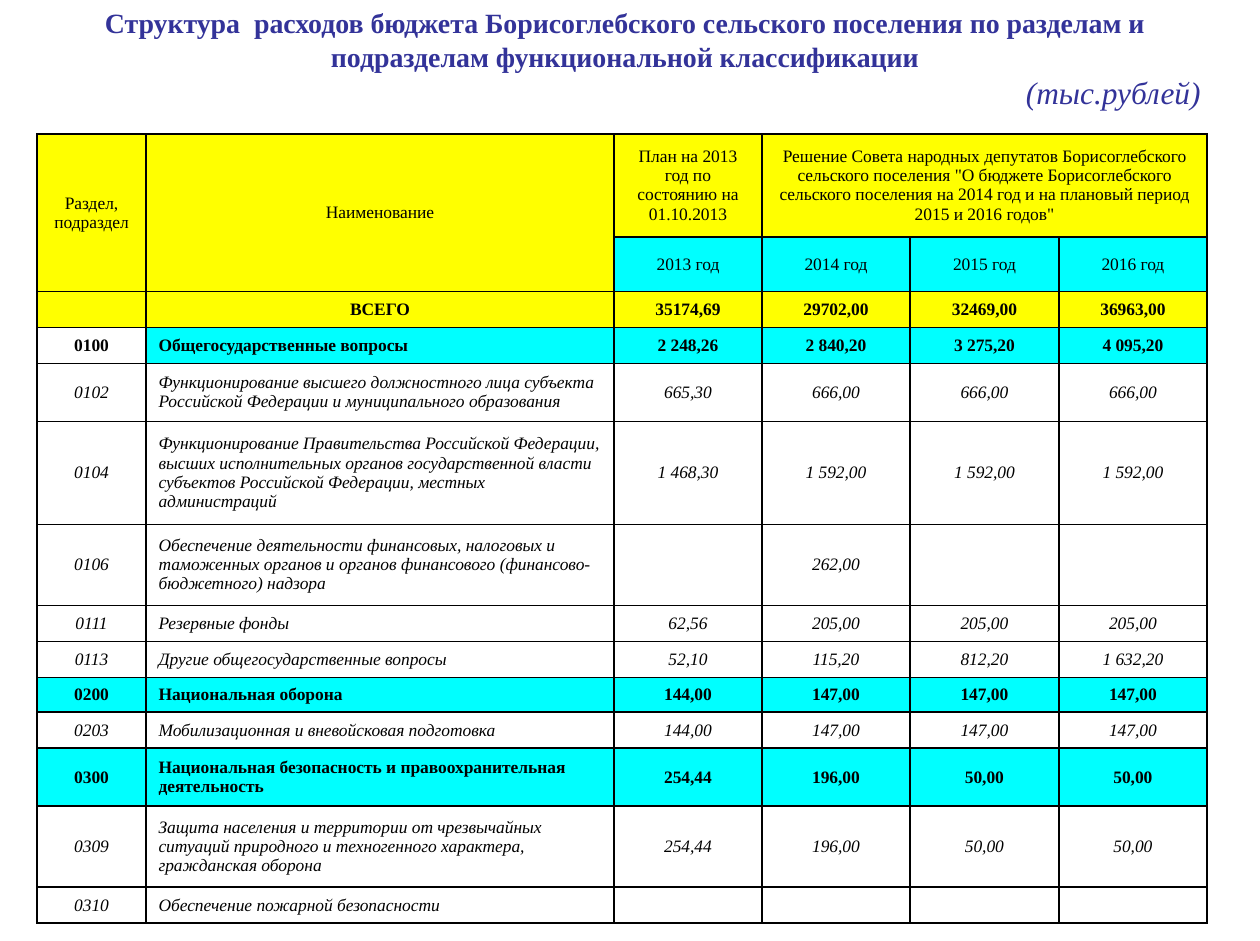
"""Build a slide with the budget expenditure table of a rural settlement."""
import lxml.etree
import pptx
import pptx.dml.color
import pptx.enum.text
import pptx.oxml.ns
import pptx.util

PX = 914400 / 125.5
YELLOW, CYAN, WHITE, BLACK, NAVY = "FFFF00", "00FFFF", "FFFFFF", "000000", "333399"
ALIGN = pptx.enum.text.PP_ALIGN
qn = pptx.oxml.ns.qn


def px(length):
    return pptx.util.Emu(round(length * PX))


def style(span, size, color, bold=False, italic=False):
    span.font.name = "Times New Roman"
    span.font.size = pptx.util.Pt(size)
    span.font.bold = bold
    span.font.italic = italic
    span.font.color.rgb = pptx.dml.color.RGBColor.from_string(color)


deck = pptx.Presentation()
deck.slide_width, deck.slide_height = px(1260), px(941)
page = deck.slides.add_slide(deck.slide_layouts[6])

box = page.shapes.add_textbox(px(37), px(0), px(1176), px(118))
box.text_frame.word_wrap = True
title = box.text_frame.paragraphs[0]
title.text = "Структура  расходов бюджета Борисоглебского сельского поселения по разделам и подразделам функциональной классификации"
title.alignment = ALIGN.CENTER
style(title.runs[0], 16, NAVY, bold=True)
units = box.text_frame.add_paragraph()
units.text = "(тыс.рублей)"
units.alignment = ALIGN.RIGHT
style(units.runs[0], 18, NAVY, italic=True)

column_widths = [109, 468, 148, 148, 149, 148]
rows = [
    (103, "head", ["Раздел, подраздел", "Наименование", "План на 2013 год по состоянию на 01.10.2013",
                   "Решение Совета народных депутатов Борисоглебского сельского поселения "
                   "\"О бюджете Борисоглебского сельского поселения на 2014 год и на плановый период 2015 и 2016 годов\"",
                   "", ""]),
    (54, "years", ["", "", "2013 год", "2014 год", "2015 год", "2016 год"]),
    (36, "total", ["", "ВСЕГО", "35174,69", "29702,00", "32469,00", "36963,00"]),
    (36, "section", ["0100", "Общегосударственные вопросы", "2 248,26", "2 840,20", "3 275,20", "4 095,20"]),
    (58, "item", ["0102", "Функционирование высшего должностного лица субъекта Российской Федерации "
                  "и муниципального образования", "665,30", "666,00", "666,00", "666,00"]),
    (103, "item", ["0104", "Функционирование Правительства Российской Федерации, высших исполнительных органов "
                   "государственной власти субъектов Российской Федерации, местных администраций",
                   "1 468,30", "1 592,00", "1 592,00", "1 592,00"]),
    (81, "item", ["0106", "Обеспечение деятельности финансовых, налоговых и таможенных органов "
                  "и органов финансового (финансово-бюджетного) надзора", "", "262,00", "", ""]),
    (36, "item", ["0111", "Резервные фонды", "62,56", "205,00", "205,00", "205,00"]),
    (36, "item", ["0113", "Другие общегосударственные вопросы", "52,10", "115,20", "812,20", "1 632,20"]),
    (35, "section", ["0200", "Национальная оборона", "144,00", "147,00", "147,00", "147,00"]),
    (36, "item", ["0203", "Мобилизационная и вневойсковая подготовка", "144,00", "147,00", "147,00", "147,00"]),
    (58, "section", ["0300", "Национальная безопасность и правоохранительная деятельность",
                     "254,44", "196,00", "50,00", "50,00"]),
    (81, "item", ["0309", "Защита населения и территории от чрезвычайных ситуаций природного "
                  "и техногенного характера, гражданская оборона", "254,44", "196,00", "50,00", "50,00"]),
    (36, "item", ["0310", "Обеспечение пожарной безопасности", "", "", "", ""]),
]
fills = {"head": YELLOW, "years": CYAN, "total": YELLOW, "section": CYAN, "item": WHITE}

frame = page.shapes.add_table(len(rows), len(column_widths), px(37), px(134),
                              px(sum(column_widths)), px(sum(row[0] for row in rows)))
table = frame.table
table.first_row = table.horz_banding = False
for column, width in zip(table.columns, column_widths):
    column.width = px(width)

for row_index, (height, kind, texts) in enumerate(rows):
    table.rows[row_index].height = px(height)
    for column_index, text in enumerate(texts):
        cell = table.cell(row_index, column_index)
        cell.vertical_anchor = pptx.enum.text.MSO_ANCHOR.MIDDLE
        properties = cell._tc.get_or_add_tcPr()
        for side in ("a:lnL", "a:lnR", "a:lnT", "a:lnB"):
            line = lxml.etree.SubElement(properties, qn(side), w="12700")
            solid = lxml.etree.SubElement(line, qn("a:solidFill"))
            lxml.etree.SubElement(solid, qn("a:srgbClr"), val=BLACK)
        cell.fill.solid()
        color = WHITE if text == "0100" else fills[kind]
        cell.fill.fore_color.rgb = pptx.dml.color.RGBColor.from_string(color)
        para = cell.text_frame.paragraphs[0]
        if text:
            para.text = text
            left = column_index == 1 and kind in ("section", "item")
            para.alignment = ALIGN.LEFT if left else ALIGN.CENTER
            style(para.runs[0], 10, BLACK, bold=kind in ("total", "section"), italic=kind == "item")
        else:
            lxml.etree.SubElement(para._p, qn("a:endParaRPr"), sz="1000")

table.cell(0, 0).merge(table.cell(1, 0))
table.cell(0, 1).merge(table.cell(1, 1))
table.cell(0, 3).merge(table.cell(0, 5))

deck.save("out.pptx")
